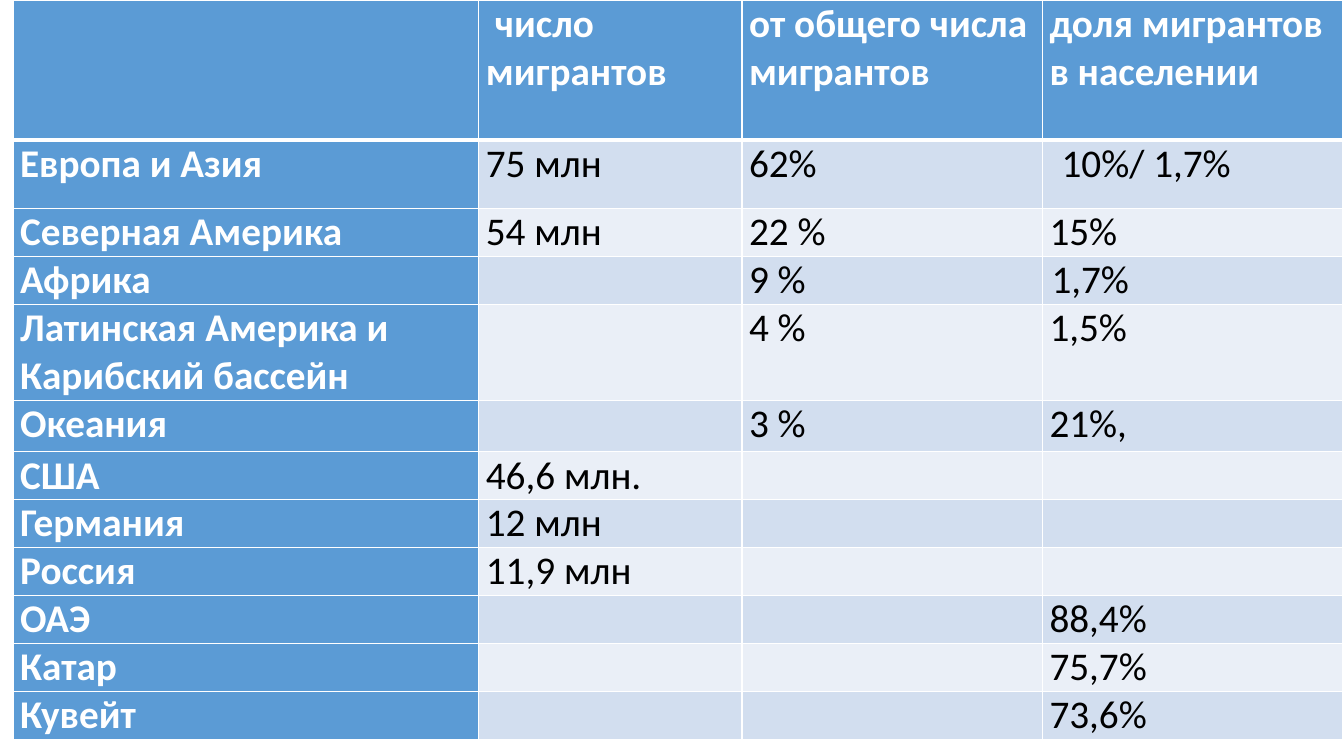
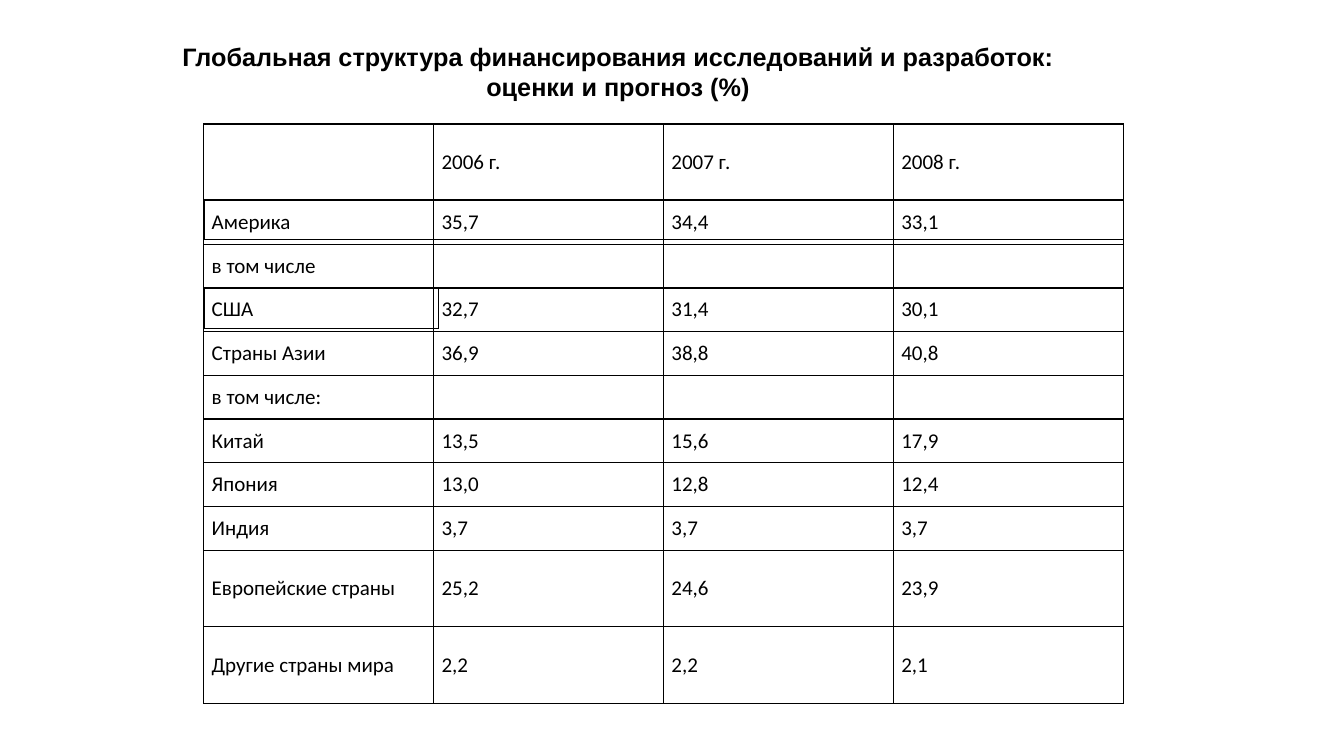
"""Build two slides of tables on migration and research funding."""
from lxml import etree
from pptx import Presentation
from pptx.dml.color import RGBColor
from pptx.enum.text import MSO_ANCHOR, PP_ALIGN
from pptx.oxml.ns import qn
from pptx.util import Inches, Pt

TOP, MIDDLE = MSO_ANCHOR.TOP, MSO_ANCHOR.MIDDLE
CENTER = PP_ALIGN.CENTER
COLORS = {"header": "5B9BD5", "odd": "D2DEEF", "even": "EAEFF7",
          "white": "FFFFFF", "black": "000000"}
BODY_FONT, TITLE_FONT = "Calibri", "Arial"

MIGRANTS = [
    ("", "число мигрантов", "от общего числа мигрантов", "доля мигрантов в населении"),
    ("Европа и Азия", "75 млн", "62%", "10%/ 1,7%"),
    ("Северная Америка", "54 млн", "22 %", "15%"),
    ("Африка", "", "9 %", "1,7%"),
    ("Латинская Америка и Карибский бассейн", "", "4 %", "1,5%"),
    ("Океания", "", "3 %", "21%,"),
    ("США", "46,6 млн.", "", ""),
    ("Германия", "12 млн", "", ""),
    ("Россия", "11,9 млн", "", ""),
    ("ОАЭ", "", "", "88,4%"),
    ("Катар", "", "", "75,7%"),
    ("Кувейт", "", "", "73,6%"),
]
MIGRANT_COLS = [4.62, 2.61, 2.98, 2.98]
MIGRANT_ROWS = [1.39, 0.68, 0.47, 0.47, 0.94, 0.51] + [0.47] * 6
MIGRANT_INDENTS = {(0, 1): 0.09, (1, 3): 0.12, (3, 3): 0.02}

FUNDING_TITLE = "Глобальная структура финансирования исследований и разработок:\vоценки и прогноз (%)"
FUNDING = [
    ("", "2006 г.", "2007 г.", "2008 г."),
    ("Америка", "35,7", "34,4", "33,1"),
    ("в том числе", "", "", ""),
    ("США", "32,7", "31,4", "30,1"),
    ("Страны Азии", "36,9", "38,8", "40,8"),
    ("в том числе:", "", "", ""),
    ("Китай", "13,5", "15,6", "17,9"),
    ("Япония", "13,0", "12,8", "12,4"),
    ("Индия", "3,7", "3,7", "3,7"),
    ("Европейские страны", "25,2", "24,6", "23,9"),
    ("Другие страны мира", "2,2", "2,2", "2,1"),
]
FUNDING_HEIGHT, TALL_ROW = 5.75, 0.76
TALL_ROWS = (0, 9, 10)
FRAMES = [(2.03, 1.98, 9.11), (2.03, 2.86, 2.32)]
FRAME_HEIGHT = 0.4


def rgb(name):
    return RGBColor.from_string(COLORS[name])


def style_text(tf, font, size, color, bold):
    for p in tf.paragraphs:
        for r in p.runs:
            r.font.name, r.font.size, r.font.bold = font, Pt(size), bold
            r.font.color.rgb = rgb(color)


def set_borders(cell, color, widths):
    tc_pr = cell._tc.get_or_add_tcPr()
    for side, width in zip("LRTB", widths):
        ln = etree.SubElement(tc_pr, qn(f"a:ln{side}"), w=str(Pt(width)))
        fill = etree.SubElement(ln, qn("a:solidFill"))
        etree.SubElement(fill, qn("a:srgbClr"), val=COLORS[color])


def add_grid(slide, left, top, rows, cols, heights, size, margins, anchor, look):
    """Add a table; look(row, col) gives fill, text colour, bold, border colour and widths."""
    shape = slide.shapes.add_table(len(rows), len(cols), Inches(left), Inches(top),
                                   Inches(sum(cols)), Inches(sum(heights)))
    table = shape.table
    table.first_row = table.horz_banding = False
    for col, width in zip(table.columns, cols):
        col.width = Inches(width)
    for i, (values, height) in enumerate(zip(rows, heights)):
        table.rows[i].height = Inches(height)
        for j, value in enumerate(values):
            cell = table.cell(i, j)
            fill, color, bold, border, widths = look(i, j)
            cell.text = value
            style_text(cell.text_frame, BODY_FONT, size, color, bold)
            cell.vertical_anchor = anchor
            cell.margin_left = cell.margin_right = Inches(margins[0])
            cell.margin_top = cell.margin_bottom = Inches(margins[1])
            set_borders(cell, border, widths)
            if fill:
                cell.fill.solid()
                cell.fill.fore_color.rgb = rgb(fill)
            else:
                cell.fill.background()
    return table


def migrant_look(i, j):
    widths = (1, 1, 3 if i == 1 else 1, 3 if i == 0 else 1)
    if i == 0 or j == 0:
        return "header", "white", True, "white", widths
    return "odd" if i % 2 else "even", "black", False, "white", widths


def plain_look(i, j):
    return None, "black", False, "black", (1, 1, 1, 1)


def build_migrants(slide):
    table = add_grid(slide, 0.13, 0, MIGRANTS, MIGRANT_COLS, MIGRANT_ROWS, 28,
                     (0.07, 0), TOP, migrant_look)
    for (i, j), indent in MIGRANT_INDENTS.items():
        p = table.cell(i, j).text_frame.paragraphs[0]
        p._p.get_or_add_pPr().set("indent", str(Inches(indent)))


def build_funding(slide):
    low_row = (FUNDING_HEIGHT - TALL_ROW * len(TALL_ROWS)) / (len(FUNDING) - len(TALL_ROWS))
    heights = [TALL_ROW if i in TALL_ROWS else low_row for i in range(len(FUNDING))]
    margins = (0.08, 0.04)
    add_grid(slide, 2.02, 1.23, FUNDING, [2.28] * 4, heights, 15, margins, MIDDLE, plain_look)

    title = slide.shapes.add_textbox(Inches(1.63), Inches(0.36), Inches(9), Inches(0.7))
    tf = title.text_frame
    tf.word_wrap = True
    tf.vertical_anchor = MIDDLE
    tf.text = FUNDING_TITLE
    tf.paragraphs[0].alignment = CENTER
    style_text(tf, TITLE_FONT, 18, "black", True)

    for left, top, width in FRAMES:
        add_grid(slide, left, top, [("",)], [width], [FRAME_HEIGHT], 15, margins, MIDDLE, plain_look)


def main():
    prs = Presentation()
    prs.slide_width, prs.slide_height = Inches(13.33), Inches(7.5)
    for build in (build_migrants, build_funding):
        build(prs.slides.add_slide(prs.slide_layouts[6]))
    prs.save("out.pptx")


if __name__ == "__main__":
    main()
